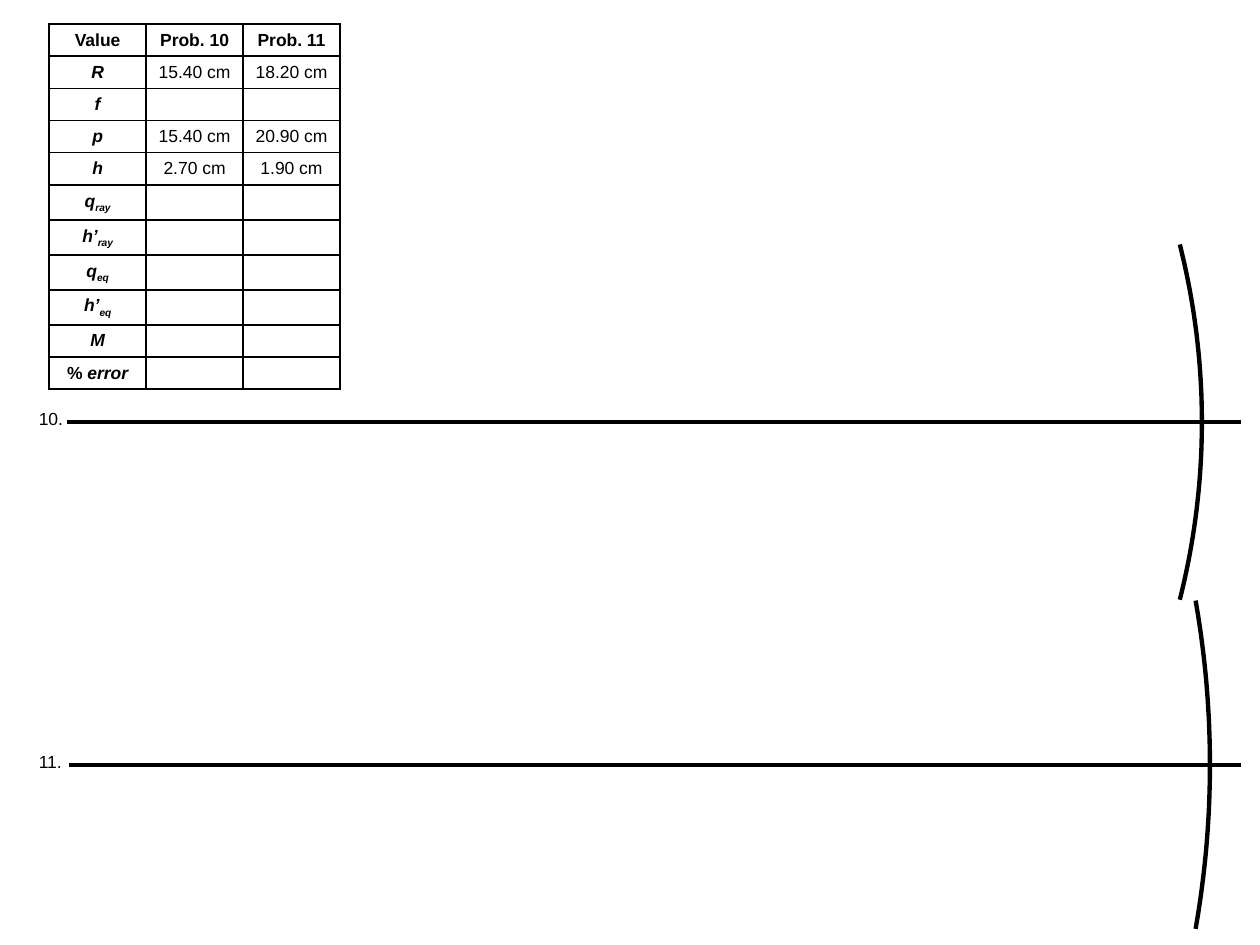
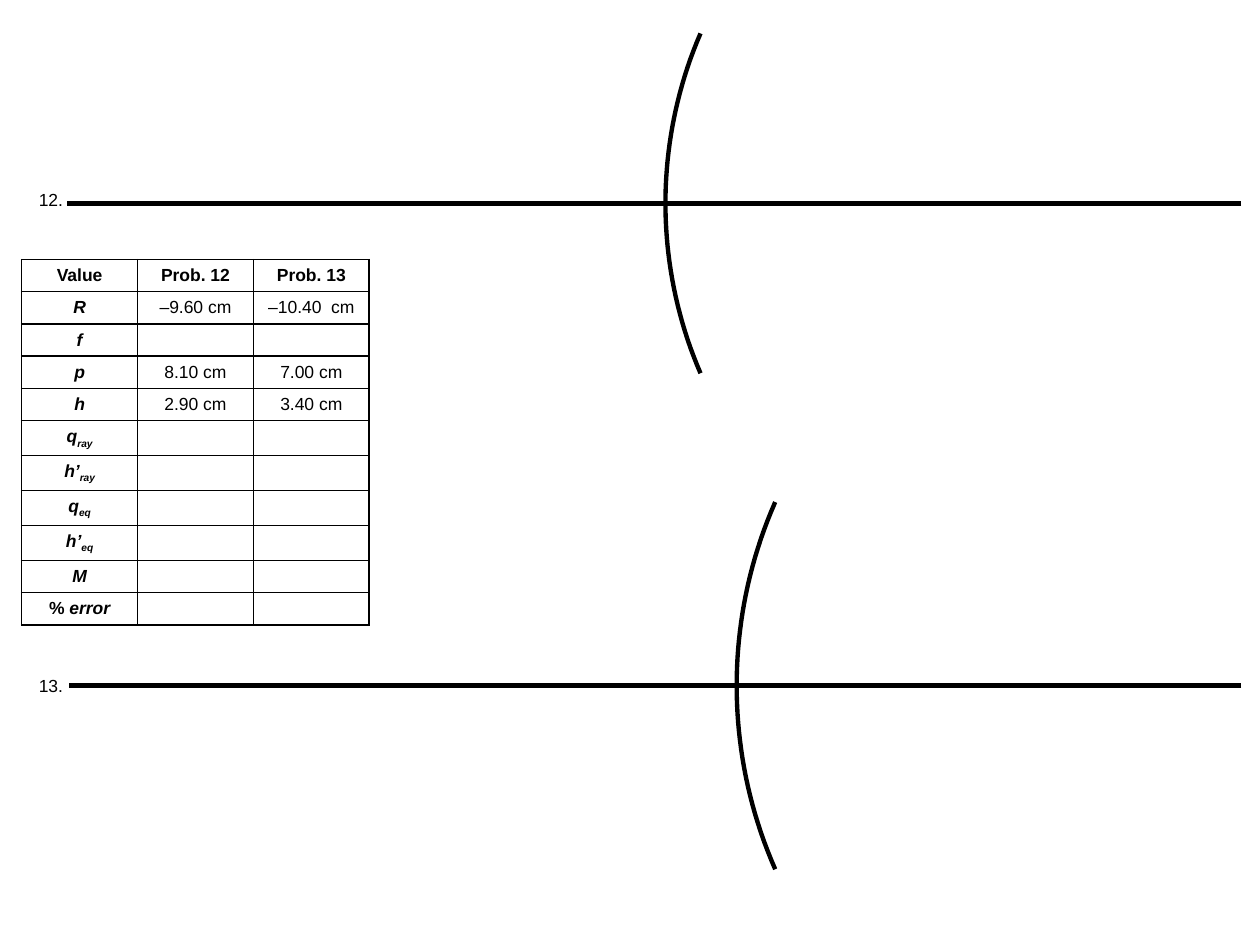
from math import sqrt
from lxml.etree import SubElement
from pptx import Presentation
from pptx.dml.color import RGBColor
from pptx.enum.shapes import MSO_CONNECTOR as CONN
from pptx.enum.text import MSO_ANCHOR, PP_ALIGN
from pptx.oxml.ns import qn
from pptx.util import Pt

BLACK = RGBColor(0, 0, 0)
FONT, SIZE = "Arial", 10
LINE_WIDTH = 2.5
AXIS_RIGHT = 709.2
LABEL_LEFT, LABEL_WIDTH, LABEL_HEIGHT = 15.1, 28, 19.4
ROW_HEIGHT = 18.2
ARC_STEPS = 20

QUANTITIES = [
    ("R", ""), ("f", ""), ("p", ""), ("h", ""), ("q", "ray"), ("h’", "ray"),
    ("q", "eq"), ("h’", "eq"), ("M", ""), ("% ", "error"),
]

SLIDES = [
    {
        "table": (28.1, 13.7, 55.4),
        "problems": ["Prob. 10", "Prob. 11"],
        "given": {
            "R": ["15.40 cm", "18.20 cm"],
            "p": ["15.40 cm", "20.90 cm"],
            "h": ["2.70 cm", "1.90 cm"],
        },
        "diagrams": [
            ("10.", 38.2, 241.2, 229.7, (686.8, 12.6, 101.5)),
            ("11.", 39.6, 437, 425.5, (691.4, 8.2, 93.8)),
        ],
    },
    {
        "table": (12.4, 148.3, 66.2),
        "problems": ["Prob. 12", "Prob. 13"],
        "given": {
            "R": ["–9.60 cm", "–10.40  cm"],
            "p": ["8.10 cm", "7.00 cm"],
            "h": ["2.90 cm", "3.40 cm"],
        },
        "diagrams": [
            ("12.", 38.2, 116.2, 104.4, (380.3, -20, 97.1)),
            ("13.", 39.6, 391.8, 382.3, (421, -22, 104.9)),
        ],
    },
]


def style(p, bold=False):
    p.font.name = FONT
    p.font.size = Pt(SIZE)
    p.font.bold = bold
    p.font.color.rgb = BLACK


def stroke(line):
    line.color.rgb = BLACK
    line.width = Pt(LINE_WIDTH)


def add_borders(cell):
    tcPr = cell._tc.get_or_add_tcPr()
    for side in ("lnL", "lnR", "lnT", "lnB"):
        ln = SubElement(tcPr, qn(f"a:{side}"), w=str(Pt(1)))
        fill = SubElement(ln, qn("a:solidFill"))
        SubElement(fill, qn("a:srgbClr"), val=str(BLACK))


def fill_cell(cell, text="", bold=False):
    add_borders(cell)
    cell.fill.background()
    cell.margin_left = cell.margin_right = Pt(3)
    cell.vertical_anchor = MSO_ANCHOR.MIDDLE
    p = cell.text_frame.paragraphs[0]
    p.alignment = PP_ALIGN.CENTER
    style(p, bold)
    if text:
        p.add_run().text = text
    else:
        SubElement(p._p, qn("a:endParaRPr"), sz=str(SIZE * 100))
    return p


def fill_quantity(cell, symbol, suffix):
    p = fill_cell(cell, symbol, bold=True)
    is_error = suffix == "error"
    p.runs[0].font.italic = not is_error
    if suffix:
        r = p.add_run()
        r.text = suffix
        r.font.italic = True
        if not is_error:
            r._r.get_or_add_rPr().set("baseline", "-25000")


def add_values_table(s, left, top, col_width, problems, given):
    rows, cols = len(QUANTITIES) + 1, len(problems) + 1
    table = s.shapes.add_table(
        rows, cols, Pt(left), Pt(top), Pt(col_width * cols), Pt(ROW_HEIGHT * rows)
    ).table
    table.first_row = table.horz_banding = False
    for col in table.columns:
        col.width = Pt(col_width)
    for row in table.rows:
        row.height = Pt(ROW_HEIGHT)
    for c, heading in enumerate(["Value", *problems]):
        fill_cell(table.cell(0, c), heading, bold=True)
    for i, (symbol, suffix) in enumerate(QUANTITIES, 1):
        fill_quantity(table.cell(i, 0), symbol, suffix)
        for c, value in enumerate(given.get(symbol, [""] * len(problems)), 1):
            fill_cell(table.cell(i, c), value)


def add_mirror(s, axis_y, vertex_x, depth, half_height):
    radius = (half_height**2 + depth**2) / (2 * abs(depth))
    side = 1 if depth > 0 else -1
    group = s.shapes.add_group_shape()
    for direction in (-1, 1):
        points = []
        for i in range(ARC_STEPS + 1):
            y = half_height * (1 - i / ARC_STEPS)
            sag = radius - sqrt(radius**2 - y**2)
            points.append((Pt(vertex_x - side * sag), Pt(axis_y + direction * y)))
        builder = group.shapes.build_freeform(*points[0])
        builder.add_line_segments(points[1:], close=False)
        arc = builder.convert_to_shape()
        arc.shadow.inherit = False
        arc.fill.background()
        stroke(arc.line)


def add_diagram(s, number, axis_left, axis_y, label_top, mirror):
    axis = s.shapes.add_connector(
        CONN.STRAIGHT, Pt(AXIS_RIGHT), Pt(axis_y), Pt(axis_left), Pt(axis_y)
    )
    stroke(axis.line)
    SubElement(axis._element.spPr, qn("a:effectLst"))
    label = s.shapes.add_textbox(
        Pt(LABEL_LEFT), Pt(label_top), Pt(LABEL_WIDTH), Pt(LABEL_HEIGHT)
    )
    tf = label.text_frame
    tf.word_wrap = False
    tf.text = number
    style(tf.paragraphs[0])
    add_mirror(s, axis_y, *mirror)


def main():
    prs = Presentation()
    prs.slide_width, prs.slide_height = Pt(720), Pt(540)
    for content in SLIDES:
        s = prs.slides.add_slide(prs.slide_layouts[6])
        add_values_table(s, *content["table"], content["problems"], content["given"])
        for diagram in content["diagrams"]:
            add_diagram(s, *diagram)
    prs.save("out.pptx")


if __name__ == "__main__":
    main()
